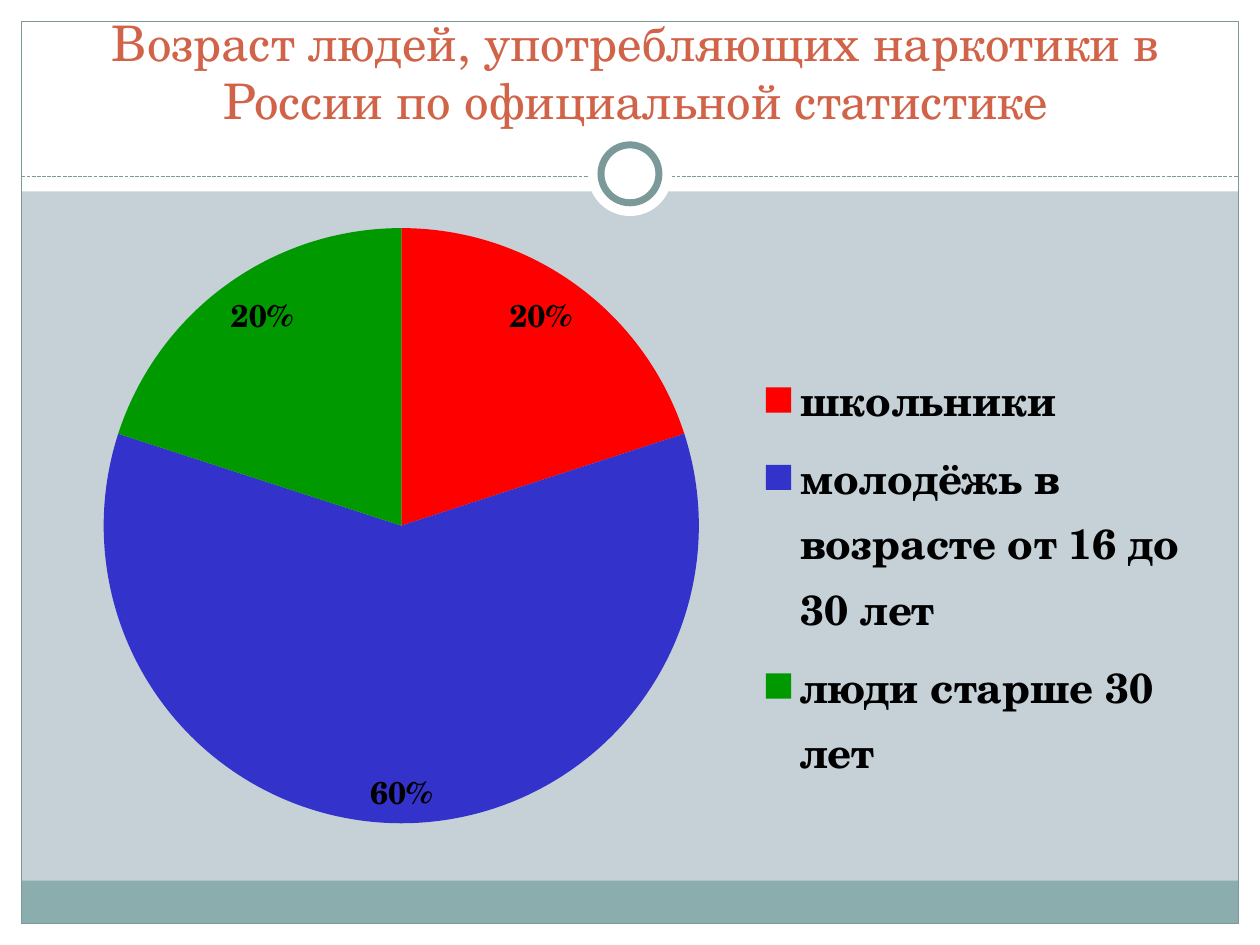
"""Build a slide with a pie chart of age groups under a framed title."""
from dataclasses import dataclass

from lxml import etree
from pptx import Presentation
from pptx.chart.data import CategoryChartData
from pptx.dml.color import RGBColor
from pptx.enum.chart import XL_CHART_TYPE, XL_LABEL_POSITION, XL_LEGEND_POSITION
from pptx.enum.dml import MSO_LINE
from pptx.enum.shapes import MSO_CONNECTOR, MSO_SHAPE
from pptx.enum.text import MSO_ANCHOR, MSO_AUTO_SIZE, PP_ALIGN
from pptx.oxml import parse_xml
from pptx.oxml.ns import nsdecls, qn
from pptx.util import Inches, Pt

RECT, OVAL = MSO_SHAPE.RECTANGLE, MSO_SHAPE.OVAL
PIE = XL_CHART_TYPE.PIE
INSIDE_END = XL_LABEL_POSITION.INSIDE_END
LEGEND_RIGHT = XL_LEGEND_POSITION.RIGHT
DASH = MSO_LINE.SQUARE_DOT
STRAIGHT = MSO_CONNECTOR.STRAIGHT
BOTTOM, CENTER, NO_FIT = MSO_ANCHOR.BOTTOM, PP_ALIGN.CENTER, MSO_AUTO_SIZE.NONE


@dataclass(frozen=True)
class Theme:
    """Colours, font and type sizes of the slide."""
    font: str = "TeX Gyre Schola"
    back: str = "C5D1D7"
    white: str = "FFFFFF"
    band: str = "8CADAE"
    edge: str = "7C999A"
    title: str = "D16349"
    ink: str = "000000"
    title_size: int = 28
    legend_size: int = 24
    label_size: int = 18
    chart_size: int = 10


THEME = Theme()
WIDTH, HEIGHT = 10, 7.5
MARGIN, HEADER, FOOTER, RULE = 0.17, 1.52, 0.34, 1.4
DISC, RING, RING_CENTER = 0.67, 0.46, 1.38
INNER = WIDTH - 2 * MARGIN

TITLE = "Возраст людей, употребляющих наркотики в России по официальной статистике"
TITLE_BOX = (0.2, 0.25, 9.69, 0.83)
CHART_BOX = (0.33, 1.67, 9.3, 5)
PLOT_SHARE = (0.053, 0.028, 0.508, 0.945)
LEGEND_SHARE = (0.61, 0.23, 0.37, 0.7)
GROUPS = [
    ("школьники", 0.2, "FF0000"),
    ("молодёжь в возрасте от 16 до 30 лет", 0.6, "3333CC"),
    ("люди старше 30 лет", 0.2, "009900"),
]


def color(code):
    """Return the colour for a hex code."""
    return RGBColor.from_string(code)


def style_font(font, size, code, bold=False):
    """Apply the theme font with a size, colour and weight."""
    font.name, font.size, font.bold = THEME.font, Pt(size), bold
    font.color.rgb = color(code)


def add_block(page, kind, box, fill=None, line=None, weight=0.75):
    """Add a plain shape with an optional fill and outline."""
    shape = page.shapes.add_shape(kind, *map(Inches, box))
    shape.shadow.inherit = False
    if fill:
        shape.fill.solid()
        shape.fill.fore_color.rgb = color(fill)
    else:
        shape.fill.background()
    if line:
        shape.line.color.rgb = color(line)
        shape.line.width = Pt(weight)
    else:
        shape.line.fill.background()


def centered(size):
    """Return a square box around the ring's centre."""
    return ((WIDTH - size) / 2, RING_CENTER - size / 2, size, size)


def add_frame(page):
    """Draw the margins, bands, dashed rule and ring."""
    for box in [
        (0, HEIGHT - MARGIN, WIDTH, MARGIN),
        (0, 0, WIDTH, HEADER),
        (0, 0, MARGIN, HEIGHT),
        (WIDTH - MARGIN, 0, MARGIN, HEIGHT),
    ]:
        add_block(page, RECT, box, fill=THEME.white)
    footer_top = HEIGHT - MARGIN - FOOTER
    add_block(page, RECT, (MARGIN, footer_top, INNER, FOOTER), fill=THEME.band)
    add_block(page, RECT, (MARGIN, MARGIN, INNER, HEIGHT - 2 * MARGIN), line=THEME.edge)
    ends = (MARGIN, RULE, WIDTH - MARGIN, RULE)
    rule = page.shapes.add_connector(STRAIGHT, *map(Inches, ends))
    rule.line.color.rgb = color(THEME.edge)
    rule.line.width, rule.line.dash_style = Pt(0.75), DASH
    etree.SubElement(rule._element.spPr, qn("a:effectLst"))
    add_block(page, OVAL, centered(DISC), fill=THEME.white)
    add_block(page, OVAL, centered(RING), fill=THEME.white, line=THEME.edge, weight=4)


def place_title(page):
    """Fill the title placeholder and bring it in front of the frame."""
    title = page.shapes.title
    title.left, title.top, title.width, title.height = map(Inches, TITLE_BOX)
    frame = title.text_frame
    frame.text = TITLE
    frame.word_wrap, frame.auto_size = True, NO_FIT
    frame.vertical_anchor = BOTTOM
    para = frame.paragraphs[0]
    para.alignment = CENTER
    style_font(para.runs[0].font, THEME.title_size, THEME.title)
    title._element.getparent().append(title._element)


def manual_layout(shares, inner=False):
    """Return a chart layout element from shares of the chart's size."""
    target = '<c:layoutTarget val="inner"/>' if inner else ""
    modes = '<c:xMode val="edge"/><c:yMode val="edge"/>'
    sizes = "".join(f'<c:{key} val="{share}"/>' for key, share in zip("xywh", shares))
    return parse_xml(
        f'<c:layout {nsdecls("c")}><c:manualLayout>{target}{modes}{sizes}'
        "</c:manualLayout></c:layout>"
    )


def add_pie(page):
    """Add the pie chart with its labels and legend."""
    data = CategoryChartData(number_format="0%")
    data.categories = [name for name, _, _ in GROUPS]
    data.add_series("Series 1", [share for _, share, _ in GROUPS])
    chart = page.shapes.add_chart(PIE, *map(Inches, CHART_BOX), data).chart
    chart.has_title = False
    style_font(chart.font, THEME.chart_size, THEME.ink)

    plot = chart.plots[0]
    plot.vary_by_categories = True
    for index, (_, _, code) in enumerate(GROUPS):
        fill = plot.series[0].points[index].format.fill
        fill.solid()
        fill.fore_color.rgb = color(code)
    labels = plot.series[0].data_labels
    labels.show_value, labels.position = True, INSIDE_END
    labels.number_format, labels.number_format_is_linked = "0%", False
    style_font(labels.font, THEME.label_size, THEME.ink, bold=True)

    chart.has_legend = True
    legend = chart.legend
    legend.position, legend.include_in_layout = LEGEND_RIGHT, False
    style_font(legend.font, THEME.legend_size, THEME.ink, bold=True)
    area = chart._chartSpace.chart.plotArea
    for owner in (area, legend._element):
        for old in owner.findall(qn("c:layout")):
            owner.remove(old)
    area.insert(0, manual_layout(PLOT_SHARE, inner=True))
    legend._element.find(qn("c:legendPos")).addnext(manual_layout(LEGEND_SHARE))


def main():
    """Build and save the deck."""
    deck = Presentation()
    deck.slide_width, deck.slide_height = Inches(WIDTH), Inches(HEIGHT)
    page = deck.slides.add_slide(deck.slide_layouts[5])
    page.background.fill.solid()
    page.background.fill.fore_color.rgb = color(THEME.back)
    add_frame(page)
    place_title(page)
    add_pie(page)
    deck.save("out.pptx")


if __name__ == "__main__":
    main()
